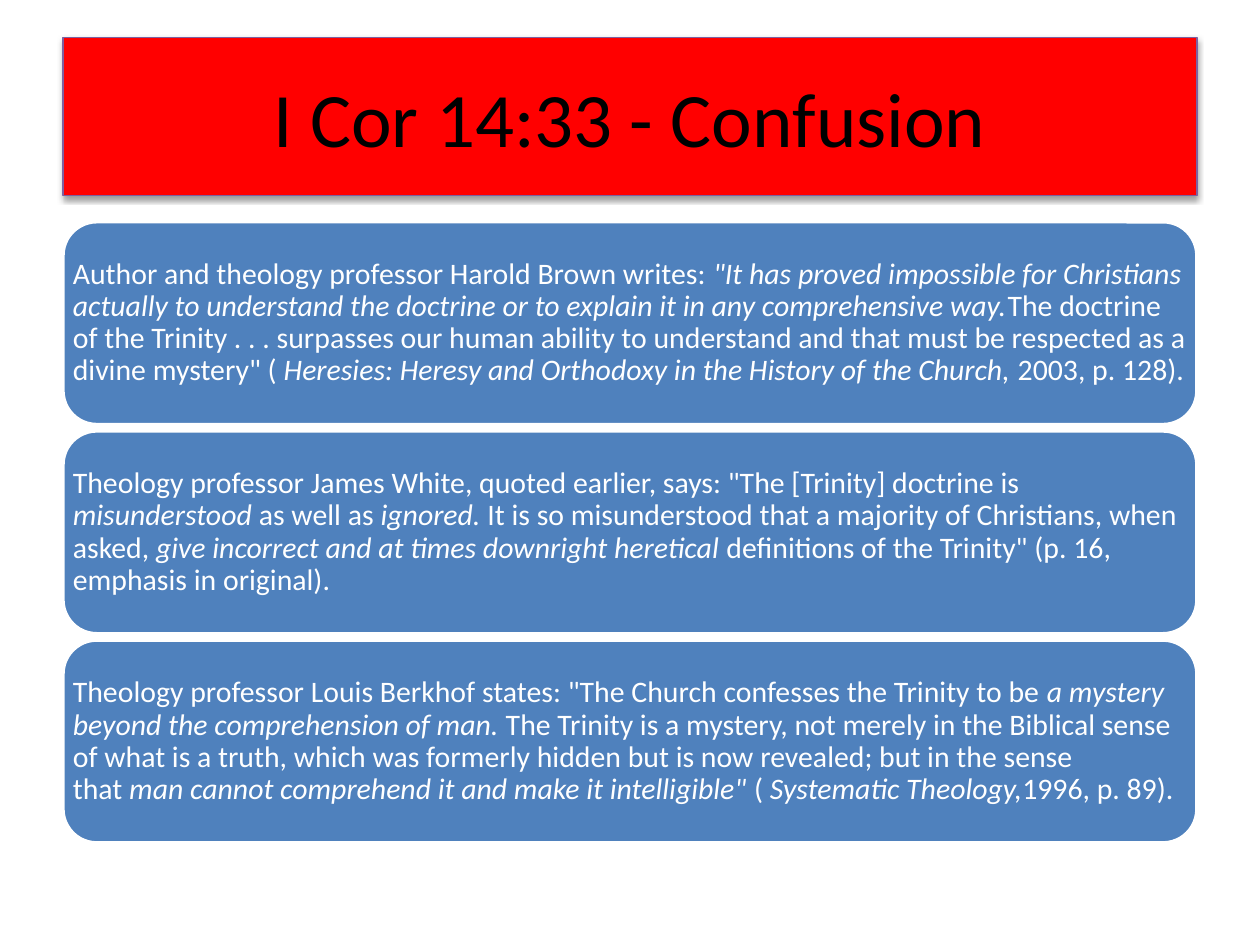
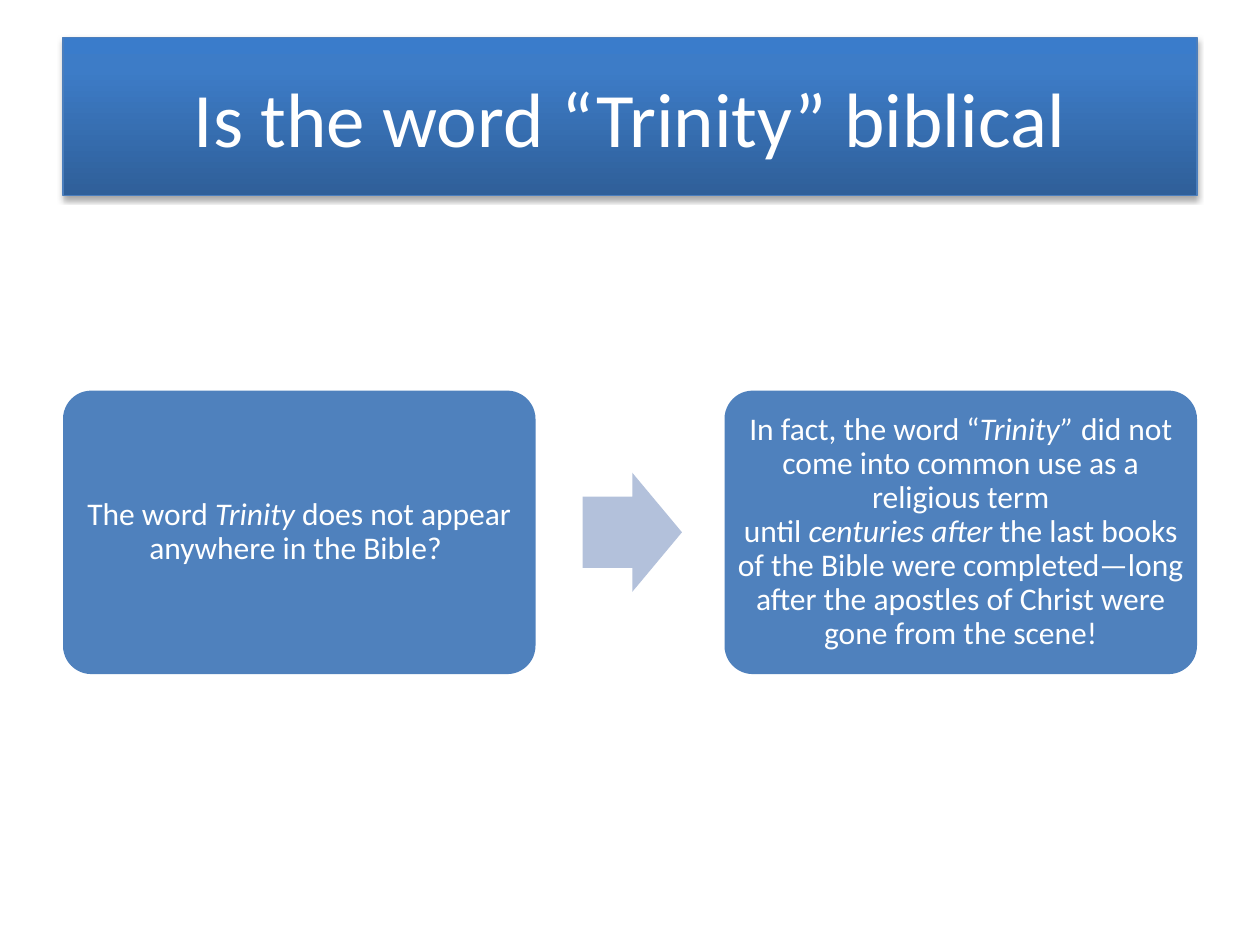
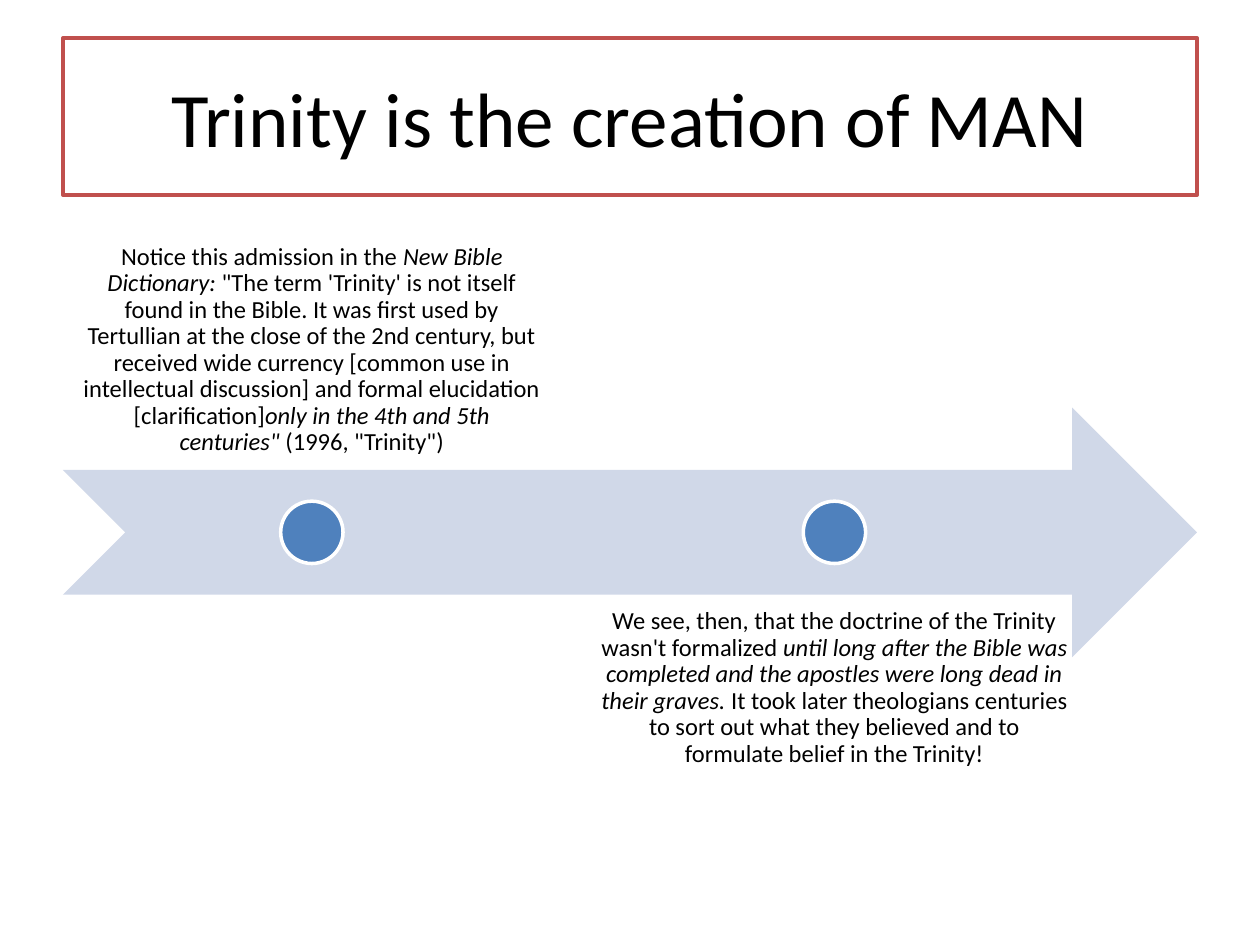
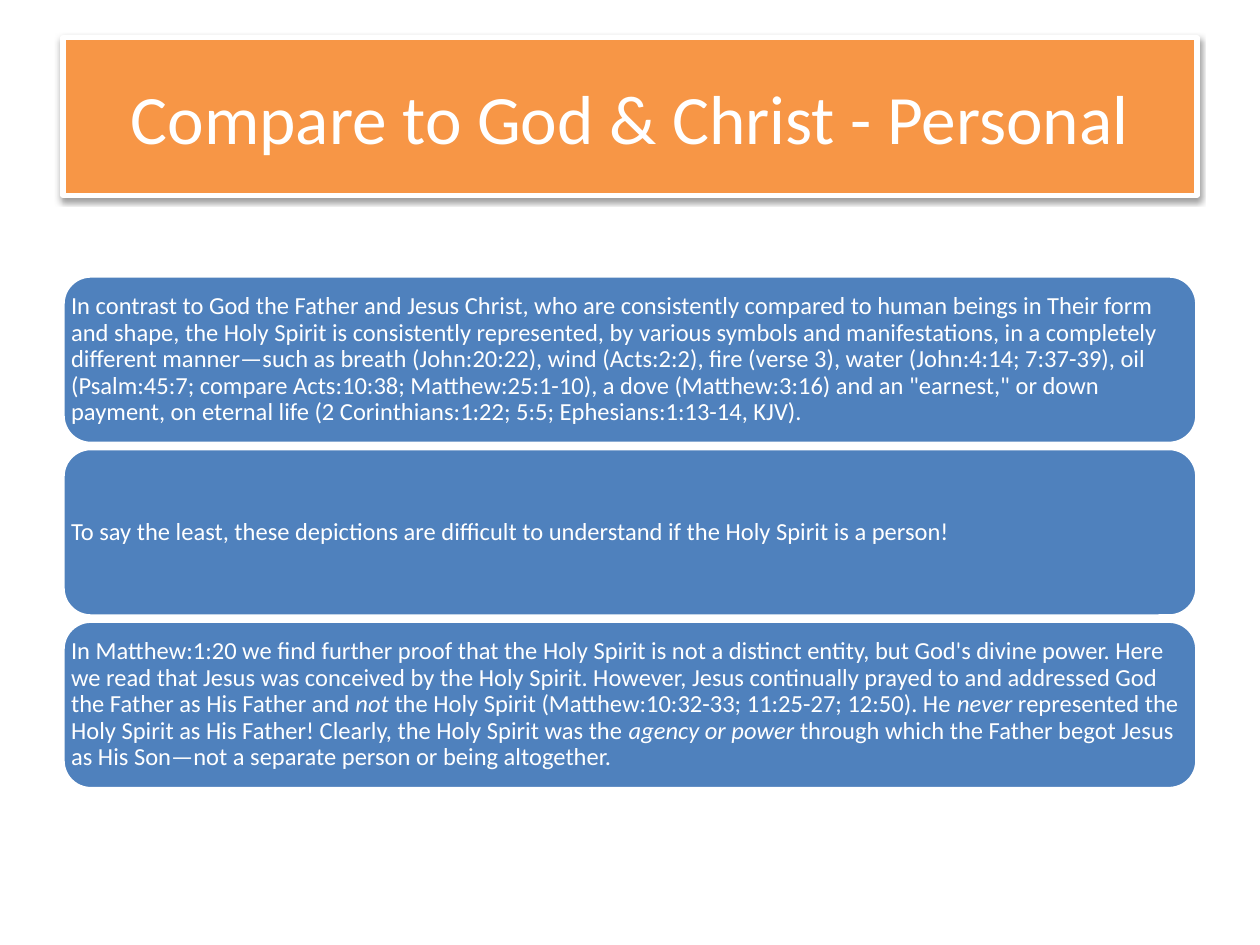
from collections import namedtuple
from copy import deepcopy

from lxml import etree
from pptx import Presentation
from pptx import util as u
from pptx.dml.color import RGBColor
from pptx.enum import shapes, text
from pptx.oxml import ns

WHITE = RGBColor(0xFF, 0xFF, 0xFF)
BLACK = RGBColor(0x00, 0x00, 0x00)
RED = RGBColor(0xFF, 0x00, 0x00)
BLUE = RGBColor(0x4F, 0x81, 0xBD)
PALE = RGBColor(0xD0, 0xD8, 0xE8)
HAZE = RGBColor(0xB3, 0xC1, 0xDB)
ORANGE = RGBColor(0xF7, 0x96, 0x46)
BRICK = RGBColor(0xC0, 0x50, 0x4D)
PURPLE = RGBColor(0x7D, 0x60, 0xA0)
STEEL = RGBColor(0x4B, 0x7E, 0xBC)
FADE = [(0, RGBColor(0x2F, 0x5F, 0x99)), (0.8, RGBColor(0x3D, 0x7C, 0xC7)),
        (1, RGBColor(0x3A, 0x7C, 0xCB))]

FONT = "Calibri"
HARD = chr(160)
KIND = shapes.MSO_SHAPE
ANCHOR = text.MSO_ANCHOR
ALIGN = text.PP_ALIGN
Box = namedtuple("Box", "x y w h")
HEAD = Box(0.5, 0.3, 9, 1.25)
BODY = Box(0.5, 1.75, 9, 4.95)

CONFUSED = [
    'Author and theology professor Harold Brown writes:~*"It has proved impossible for Christians '
    'actually to understand the doctrine or to explain it in any comprehensive way.*The doctrine of '
    'the Trinity .~.~. surpasses our human ability to understand and that must be respected as a '
    'divine mystery" (*~Heresies: Heresy and Orthodoxy in the History of the Church,*~2003, p. 128).',
    'Theology professor James White, quoted earlier, says: "The [Trinity] doctrine is '
    '*misunderstood*~as well as~*ignored.*~It is so misunderstood that a majority of Christians, '
    'when asked,~*give incorrect and at times downright~heretical*~definitions of the Trinity" '
    '(p. 16, emphasis in original).~',
    'Theology professor Louis Berkhof states: "The Church confesses the Trinity to be~*a mystery '
    'beyond the comprehension of man.*~The Trinity is a mystery, not merely in the Biblical sense '
    'of what is a truth, which was formerly hidden but is now revealed; but in the sense that~'
    '*man cannot comprehend it and make it intelligible"*~(*~Systematic Theology,*1996, p. 89).',
]
WORDS = [
    'The word~*Trinity*~does not appear anywhere in the Bible? ',
    'In fact, the word “*Trinity”*~did not come into common use as a religious term until~'
    '*centuries~after*~the last books of the Bible were completed—long after the apostles of '
    'Christ were gone from the scene!',
]
EVENTS = [
    'Notice this admission in the~*New Bible Dictionary:*~"The term \'Trinity\' is not itself '
    'found in the Bible. It was first used by Tertullian at the close of the 2nd century, but '
    'received wide currency [common use in intellectual discussion] and formal elucidation '
    '[clarification]*only in the 4th and 5th centuries"*~(1996, "Trinity")',
    "We see, then, that the doctrine of the Trinity wasn't formalized~*until long after the Bible "
    'was completed and the apostles were long dead in their graves.*~It took later theologians '
    'centuries to sort out what they believed and to formulate belief in the Trinity!',
]
PERSON = [
    'In contrast to God the Father and Jesus Christ, who are consistently compared to human beings '
    'in Their form and shape, the Holy Spirit is consistently represented, by various symbols and '
    'manifestations, in a completely different manner—such as breath (John:20:22), wind '
    '(Acts:2:2), fire (verse 3), water (John:4:14; 7:37-39), oil (Psalm:45:7; compare~Acts:10:38;~'
    'Matthew:25:1-10), a dove (Matthew:3:16) and an "earnest," or down payment, on eternal life '
    '(2 Corinthians:1:22; 5:5;~Ephesians:1:13-14, KJV).',
    'To say the least, these depictions are difficult to understand if the Holy Spirit is a person!',
    "In~Matthew:1:20~we find further proof that the Holy Spirit is not a distinct entity, but God's "
    'divine power. Here we read that Jesus was conceived by the Holy Spirit. However, Jesus '
    'continually prayed to and addressed God the Father as His Father and~*not~*the Holy Spirit '
    '(Matthew:10:32-33; 11:25-27; 12:50). He~*never*~represented the Holy Spirit as His Father! '
    'Clearly, the Holy Spirit was the~*agency or power~*through which the Father begot Jesus as '
    'His Son—not a separate person or being altogether.',
]


def part(box, x, y, w, h):
    """Return the part of a box given by shares of its size."""
    return Box(box.x + x * box.w, box.y + y * box.h, w * box.w, h * box.h)


def inch(box):
    """Turn a box into slide lengths."""
    return [u.Inches(v) for v in box]


def apply(item, **form):
    """Set each format value on an item."""
    for name, value in form.items():
        setattr(item, name, value)


def write(shape, words, size, color, align, anchor=ANCHOR.MIDDLE, inset=0.0):
    """Write one paragraph: asterisks bound italics, a tilde is a hard space."""
    frame = shape.text_frame
    edges = ("left", "top", "right", "bottom")
    apply(frame, word_wrap=True, vertical_anchor=anchor,
          **{f"margin_{edge}": u.Inches(inset) for edge in edges})
    para = frame.paragraphs[0]
    apply(para, alignment=align, line_spacing=0.9)
    after = etree.SubElement(para._p.get_or_add_pPr(), ns.qn("a:spcAft"))
    etree.SubElement(after, ns.qn("a:spcPct"), val="35000")
    for rank, piece in enumerate(words.replace("~", HARD).split("*")):
        if piece:
            run = para.add_run()
            run.text = piece
            apply(run.font, name=FONT, size=u.Pt(size), italic=rank % 2 == 1)
            run.font.color.rgb = color


def draw(slide, kind, box, fill, edge=0, adj=()):
    """Add a plain shape with an optional white edge."""
    shape = slide.shapes.add_shape(kind, *inch(box))
    shape.shadow.inherit = False
    shape.fill.solid()
    shape.fill.fore_color.rgb = fill
    if edge:
        shape.line.color.rgb = WHITE
        shape.line.width = u.Pt(edge)
    else:
        shape.line.fill.background()
    for rank, value in enumerate(adj):
        shape.adjustments[rank] = value
    return shape


def blend(shape, stops):
    """Fill a shape with an upward blend of colour stops."""
    shape.fill.gradient()
    shape.fill.gradient_angle = 90
    store = shape._element.spPr.find(".//" + ns.qn("a:gsLst"))
    while len(store) < len(stops):
        store.append(deepcopy(store[-1]))
    for stop, (place, color) in zip(shape.fill.gradient_stops, stops):
        stop.position = place
        stop.color.rgb = color


def shade(shape, alpha, drop):
    """Add a soft shadow below a shape."""
    effects = shape._element.spPr.find(ns.qn("a:effectLst"))
    outer = etree.SubElement(effects, ns.qn("a:outerShdw"), blurRad="40000", dist=str(drop),
                             dir="5400000", rotWithShape="0")
    color = etree.SubElement(outer, ns.qn("a:srgbClr"), val=str(BLACK))
    etree.SubElement(color, ns.qn("a:alpha"), val=str(alpha * 1000))


def start(deck, words, fill, line, width, color, size=44, shadow=None):
    """Add a slide with its title band."""
    slide = deck.slides.add_slide(deck.slide_layouts[5])
    title = slide.shapes.title
    apply(title, **dict(zip(("left", "top", "width", "height"), inch(HEAD))))
    if isinstance(fill, list):
        blend(title, fill)
    else:
        title.fill.solid()
        title.fill.fore_color.rgb = fill
    title.line.color.rgb = line
    title.line.width = u.Pt(width)
    title.shadow.inherit = False
    if shadow:
        shade(title, *shadow)
    frame = title.text_frame
    frame.text = words
    apply(frame, word_wrap=True, auto_size=text.MSO_AUTO_SIZE.NONE,
          vertical_anchor=ANCHOR.MIDDLE)
    para = frame.paragraphs[0]
    para.alignment = ALIGN.CENTER
    font = para.runs[0].font
    apply(font, name=FONT, size=u.Pt(size))
    font.color.rgb = color
    return slide


def stack(slide, box, quotes, size, high, gap):
    """Stack quote cards of a given height in the middle of a box."""
    pitch = high + gap
    top = box.y + (box.h - len(quotes) * pitch + gap) / 2
    for row, quote in enumerate(quotes):
        place = Box(box.x, top + row * pitch, box.w, high)
        card = draw(slide, KIND.ROUNDED_RECTANGLE, place, BLUE, 2)
        write(card, quote, size, WHITE, ALIGN.LEFT)


def flow(slide, box, steps):
    """Set two cards side by side with an arrow between."""
    wide, high = 5 / 12, 5 / 11
    for col, step in enumerate(steps):
        place = part(box, col * (1 - wide), (1 - high) / 2, wide, high)
        card = draw(slide, KIND.ROUNDED_RECTANGLE, place, BLUE, adj=[0.1])
        write(card, step, 18, WHITE, ALIGN.CENTER)
        if col == 0:
            draw(slide, KIND.RIGHT_ARROW, part(place, 1.1, 0.29, 0.21, 0.42), HAZE,
                 adj=[0.6, 0.5])


def trail(slide, box, events):
    """Draw a time arrow with a dot and a note for each event."""
    band, wide = 0.4, 3.95 / 9
    pitch = 1.05 * wide
    draw(slide, KIND.NOTCHED_RIGHT_ARROW, part(box, 0, 0.3, 1, band), PALE)
    for col, event in enumerate(events):
        place = part(box, col * pitch, col * (1 - band), wide, band)
        note = slide.shapes.add_textbox(*inch(place))
        write(note, event, 14, BLACK, ALIGN.CENTER,
              ANCHOR.TOP if col else ANCHOR.BOTTOM, 0.11)
        side = box.h * band / 4
        dot = Box(place.x + (place.w - side) / 2, box.y + (box.h - side) / 2, side, side)
        draw(slide, KIND.OVAL, dot, BLUE, 2)


def main():
    """Build the four slides and save them."""
    deck = Presentation()
    apply(deck, slide_width=u.Inches(10), slide_height=u.Inches(7.5))
    slide = start(deck, "I Cor 14:33 - Confusion", RED, PURPLE, 0.75, BLACK, shadow=(38, 20000))
    stack(slide, BODY, CONFUSED, 17, 1.61, 0.05)
    slide = start(deck, "Is the word “Trinity” biblical", FADE, STEEL, 0.75, WHITE,
                  shadow=(35, 23000))
    flow(slide, BODY, WORDS)
    slide = start(deck, "Trinity is the creation of MAN", WHITE, BRICK, 2, BLACK)
    trail(slide, BODY, EVENTS)
    slide = start(deck, "Compare to God & Christ - Personal", ORANGE, WHITE, 3, WHITE, 39.6,
                  shadow=(38, 20000))
    stack(slide, BODY, PERSON, 14, 1.33, 0.04)
    deck.save("out.pptx")


if __name__ == "__main__":
    main()
